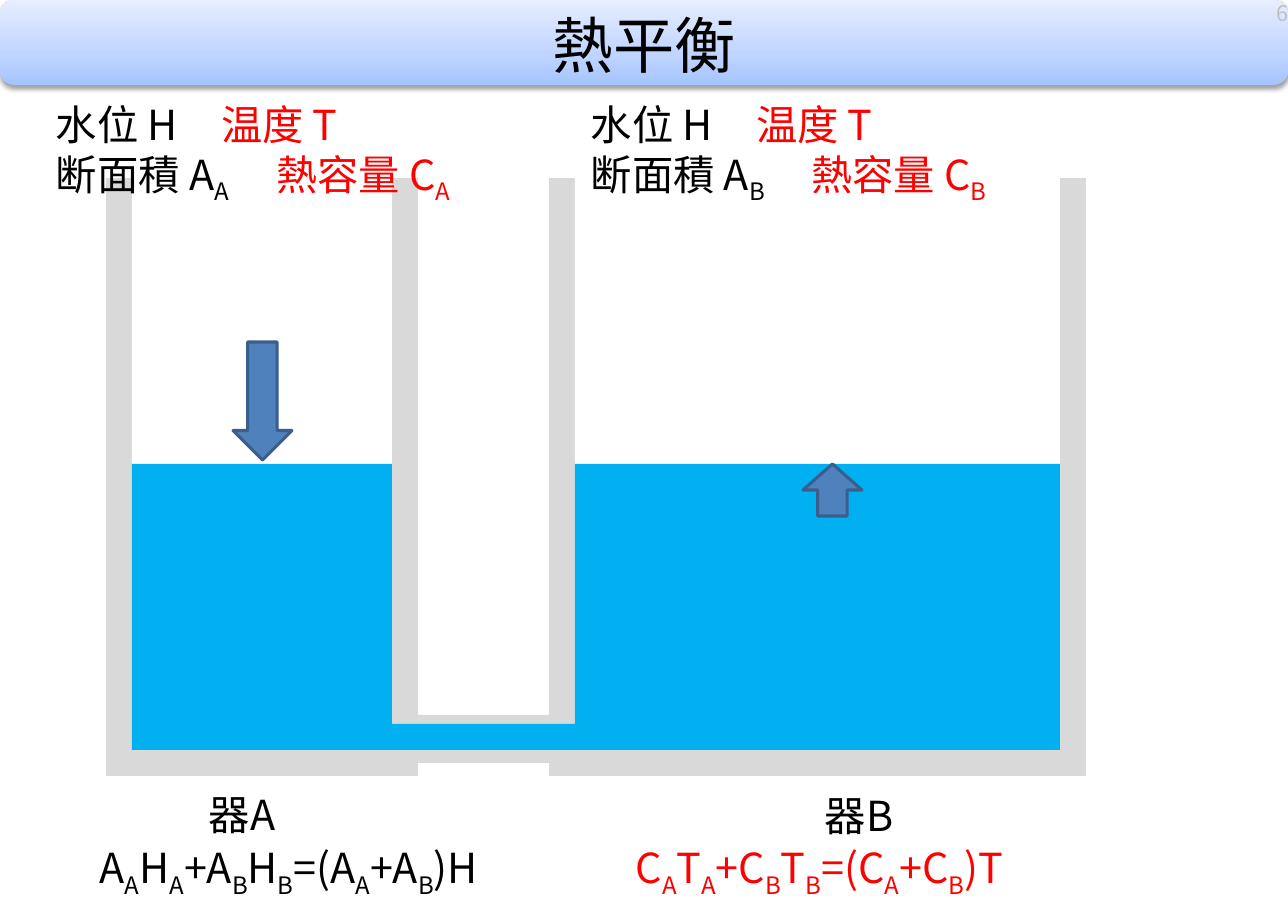
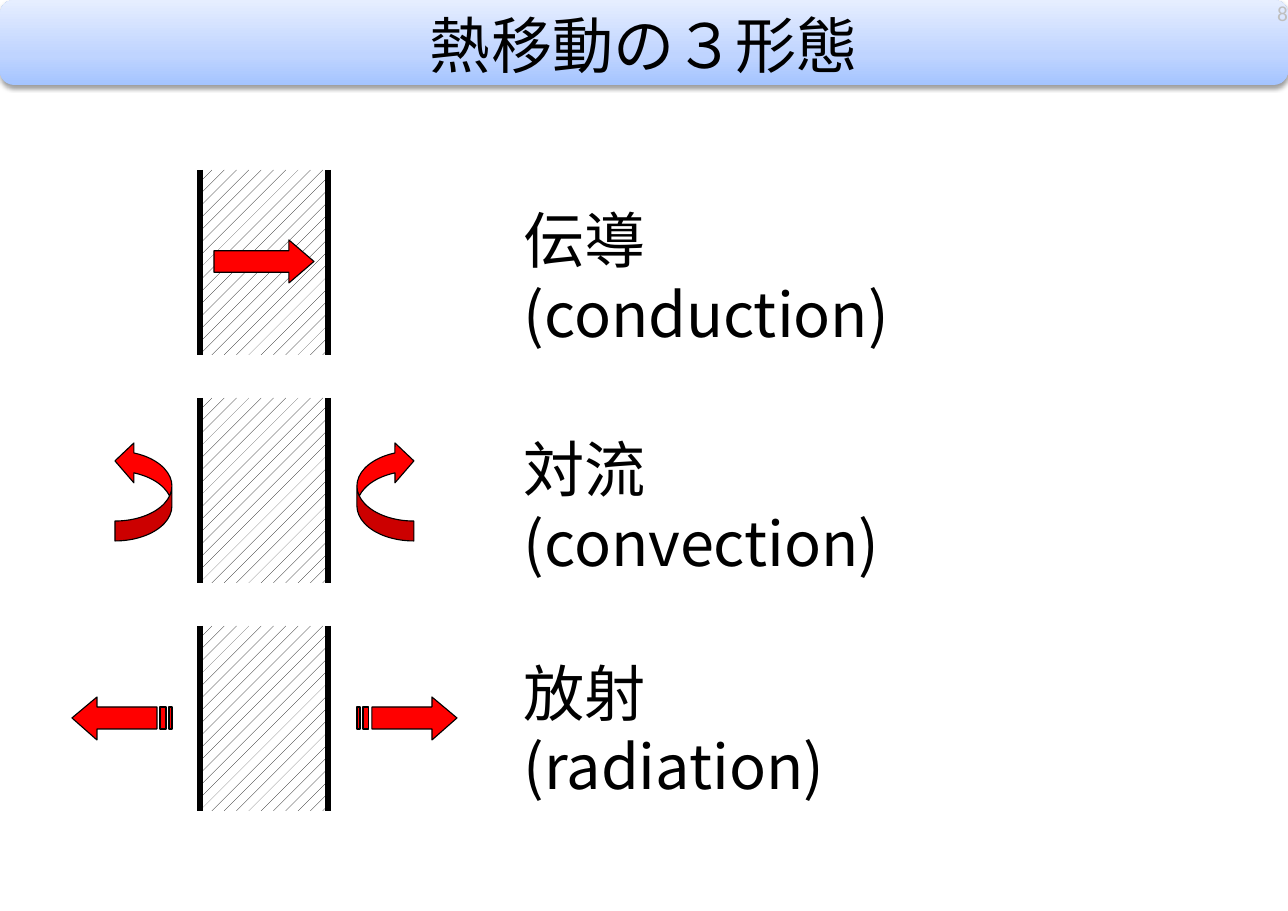
from dataclasses import dataclass

from lxml.etree import SubElement
from pptx import Presentation
from pptx.dml.color import RGBColor
from pptx.enum.dml import MSO_PATTERN
from pptx.enum.shapes import MSO_CONNECTOR, MSO_SHAPE
from pptx.enum.text import MSO_ANCHOR, PP_ALIGN
from pptx.oxml.ns import qn
from pptx.shapes.autoshape import Shape
from pptx.slide import Slide
from pptx.util import Pt

# Shared scale, colours and fonts
PX = 8300  # EMU per px
PAGE_W, PAGE_H = 1288, 911
BLACK, WHITE, RED = "000000", "FFFFFF", "FF0000"
WALL_GREY, WATER_BLUE = "D9D9D9", "00B0F0"
ARROW_BLUE, ARROW_EDGE, NUMBER_GREY = "4F81BD", "3A5F8C", "BFBFBF"
BAND_STOPS = [(0, "A4C4FF"), (35, "BFD4FF"), (100, "E6EEFF")]
BODY_FONT, NUMBER_FONT = "Noto Sans CJK JP", "Calibri"
NO_INSETS = dict(margin_left=0, margin_top=0, margin_right=0,
                 margin_bottom=0, vertical_anchor=MSO_ANCHOR.MIDDLE)


@dataclass(frozen=True)
class Box:
    left: int
    top: int
    width: int
    height: int

    def emu(self) -> list[int]:
        return [v * PX for v in (self.left, self.top, self.width, self.height)]


@dataclass(frozen=True)
class Span:
    """Text in one colour; the character after each underscore is a subscript."""
    text: str
    color: str = BLACK


@dataclass(frozen=True)
class Vessel:
    letter: str
    outer: Box
    name_box: Box
    state_box: Box


@dataclass(frozen=True)
class HeatMode:
    label: str
    label_top: int


def rgb(color: str) -> RGBColor:
    return RGBColor.from_string(color)


# Drawing helpers
def outline(shape: Shape, color: str | None, points: float) -> None:
    if color is None:
        shape.line.fill.background()
    else:
        shape.line.color.rgb = rgb(color)
        shape.line.width = Pt(points)


def paint(shape: Shape, fill: str, line: str | None = None,
          points: float = 0.75) -> None:
    shape.shadow.inherit = False
    shape.fill.solid()
    shape.fill.fore_color.rgb = rgb(fill)
    outline(shape, line, points)


def add_preset(slide: Slide, kind: MSO_SHAPE, box: Box, fill: str,
               line: str | None = None, points: float = 0.75,
               adjust: tuple[float, ...] = (), flip: str = "") -> None:
    shape = slide.shapes.add_shape(kind, *box.emu())
    paint(shape, fill, line, points)
    for index, value in enumerate(adjust):
        shape.adjustments[index] = value
    for axis in flip:
        shape._element.spPr.find(qn("a:xfrm")).set(f"flip{axis}", "1")


def add_text(slide: Slide, box: Box, lines: list[list[Span]], size: int,
             font: str = BODY_FONT, align: PP_ALIGN = PP_ALIGN.LEFT,
             frame_format: dict | None = None) -> None:
    frame = slide.shapes.add_textbox(*box.emu()).text_frame
    for name, value in {"word_wrap": True, **(frame_format or {})}.items():
        setattr(frame, name, value)
    for index, spans in enumerate(lines):
        paragraph = frame.add_paragraph() if index else frame.paragraphs[0]
        paragraph.alignment = align
        for span in spans:
            plain, *marked = span.text.split("_")
            pieces = [(plain, False)]
            for piece in marked:
                pieces += [(piece[0], True), (piece[1:], False)]
            for text, lowered in pieces:
                for part_no, part in enumerate(text.split("\n")):
                    if part_no:
                        paragraph.add_line_break()
                    if not part:
                        continue
                    run = paragraph.add_run()
                    run.text = part
                    for name, value in {"size": Pt(size), "name": font}.items():
                        setattr(run.font, name, value)
                    run.font.color.rgb = rgb(span.color)
                    props = run.font._element
                    SubElement(props, qn("a:ea")).set("typeface", font)
                    if lowered:
                        props.set("baseline", "-25000")


def add_band(slide: Slide) -> None:
    band = slide.shapes.add_shape(MSO_SHAPE.ROUNDED_RECTANGLE,
                                  *Box(0, 0, PAGE_W, 85).emu())
    outline(band, None, 0)
    band.fill.gradient()
    band.fill.gradient_angle = 90
    band.shadow.inherit = False
    props = band._element.spPr
    stops = props.find(f".//{qn('a:gsLst')}")
    for stop in list(stops):
        stops.remove(stop)
    for percent, color in BAND_STOPS:
        stop = SubElement(stops, qn("a:gs"), pos=str(percent * 1000))
        SubElement(stop, qn("a:srgbClr"), val=color)
    shadow = SubElement(props.find(qn("a:effectLst")), qn("a:outerShdw"),
                        blurRad=str(Pt(3.1)), dist=str(Pt(1.6)),
                        dir="5400000", rotWithShape="0")
    shade = SubElement(shadow, qn("a:srgbClr"), val=BLACK)
    SubElement(shade, qn("a:alpha"), val="38000")


def start_slide(prs: Presentation, title: str, number: str,
                number_font: str) -> Slide:
    slide = prs.slides.add_slide(prs.slide_layouts[6])
    add_band(slide)
    add_text(slide, Box(0, 1, PAGE_W, 87), [[Span(title)]], 40,
             align=PP_ALIGN.CENTER, frame_format=NO_INSETS)
    add_text(slide, Box(1251, 0, 37, 26), [[Span(number, NUMBER_GREY)]], 14,
             number_font, PP_ALIGN.RIGHT, NO_INSETS)
    return slide


# Thermal equilibrium: two joined vessels
WALL = 26
WATER_TOP, FLOOR = 464, 750
VESSELS = [
    Vessel("A", Box(106, 178, 312, 598), Box(198, 784, 116, 62),
           Box(45, 94, 457, 111)),
    Vessel("B", Box(549, 178, 537, 598), Box(814, 785, 116, 62),
           Box(580, 94, 457, 111)),
]
BALANCES = [
    (89, Span("A_AH_A+A_BH_B=(A_A+A_B)H")),
    (625, Span("C_AT_A+C_BT_B=(C_A+C_B)T", RED)),
]
LEVEL_ARROWS = [(Box(233, 342, 59, 118), ""), (Box(803, 464, 59, 52), "V")]


def add_vessel(slide: Slide, outer: Box) -> None:
    left, width = outer.left + WALL, outer.width - 2 * WALL
    inside = Box(left, outer.top, width, FLOOR - outer.top)
    water = Box(left, WATER_TOP, width, FLOOR - WATER_TOP)
    for box, color in ((outer, WALL_GREY), (inside, WHITE),
                       (water, WATER_BLUE)):
        add_preset(slide, MSO_SHAPE.RECTANGLE, box, color)


def build_equilibrium(prs: Presentation) -> None:
    slide = start_slide(prs, "熱平衡", "6", BODY_FONT)
    pipe_left = VESSELS[0].outer.left + VESSELS[0].outer.width
    pipe_width = VESSELS[1].outer.left - pipe_left
    add_preset(slide, MSO_SHAPE.RECTANGLE,
               Box(pipe_left, 715, pipe_width, 48), WALL_GREY)
    for vessel in VESSELS:
        add_vessel(slide, vessel.outer)
    add_preset(slide, MSO_SHAPE.RECTANGLE,
               Box(pipe_left - WALL, FLOOR - WALL, pipe_width + 2 * WALL, WALL),
               WATER_BLUE)
    for box, flip in LEVEL_ARROWS:
        add_preset(slide, MSO_SHAPE.DOWN_ARROW, box, ARROW_BLUE, ARROW_EDGE,
                   2, flip=flip)

    # Names, states and balance equations
    for vessel in VESSELS:
        letter = vessel.letter
        add_text(slide, vessel.name_box, [[Span(f"器{letter}")]], 27)
        state = [[Span("水位 H\t"), Span("温度 T", RED)],
                 [Span(f"断面積 A_{letter}\t"),
                  Span(f"熱容量 C_{letter}", RED)]]
        add_text(slide, vessel.state_box, state, 27)
    for left, equation in BALANCES:
        add_text(slide, Box(left, 837, 549, 62), [[equation]], 27)


# Three modes of heat transfer: one wall per row
SLAB_LEFT, SLAB_WIDTH, SLAB_HEIGHT = 200, 129, 185
FIRST_ROW, ROW_STEP = 170, 228
TAIL_LEFT, TAIL_RIGHT = 172, 357
SWIRL_WIDTH = 57
MODES = [
    HeatMode("伝導\n(conduction)", 197),
    HeatMode("対流\n(convection)", 426),
    HeatMode("放射\n(radiation)", 650),
]
# Outlines measured from the tail of the arrow
RAY_OUTLINES = [
    [(75, 0), (75, 10), (15, 10), (15, 32), (75, 32), (75, 43), (100, 21)],
    [(6, 10), (6, 32), (12, 32), (12, 10)],
    [(0, 10), (0, 32), (3, 32), (3, 10)],
]


def add_slab(slide: Slide, top: int) -> None:
    slab = slide.shapes.add_shape(
        MSO_SHAPE.RECTANGLE,
        *Box(SLAB_LEFT, top, SLAB_WIDTH, SLAB_HEIGHT).emu())
    slab.shadow.inherit = False
    slab.fill.patterned()
    slab.fill.pattern = MSO_PATTERN.PERCENT_10
    slab.fill.fore_color.rgb = rgb(BLACK)
    slab.fill.back_color.rgb = rgb(WHITE)
    outline(slab, None, 0)
    for x in (SLAB_LEFT, SLAB_LEFT + SLAB_WIDTH - 1):
        face = slide.shapes.add_connector(
            MSO_CONNECTOR.STRAIGHT, x * PX, top * PX, x * PX,
            (top + SLAB_HEIGHT) * PX)
        face.line.color.rgb = rgb(BLACK)
        face.line.width = Pt(4.5)
        SubElement(face._element.spPr, qn("a:effectLst"))


def add_ray(slide: Slide, tail: int, top: int, direction: int) -> None:
    contours = [[(tail + direction * x, top + y) for x, y in points]
                for points in RAY_OUTLINES]
    builder = slide.shapes.build_freeform(*contours[0][0], scale=PX)
    for index, (start, *rest) in enumerate(contours):
        if index:
            builder.move_to(*start)
        builder.add_line_segments(rest, close=True)
    paint(builder.convert_to_shape(), RED, BLACK)


def build_heat_modes(prs: Presentation) -> None:
    slide = start_slide(prs, "熱移動の３形態", "8", NUMBER_FONT)
    tops = [FIRST_ROW + row * ROW_STEP for row in range(len(MODES))]
    for top, mode in zip(tops, MODES):
        add_slab(slide, top)
        add_text(slide, Box(513, mode.label_top, 503, 85),
                 [[Span(mode.label)]], 40)

    # Heat arrows of each mode
    conduction, convection, radiation = tops
    add_preset(slide, MSO_SHAPE.RIGHT_ARROW, Box(214, conduction + 70, 100, 43),
               RED, BLACK, adjust=(0.5, 0.583))
    for left, flip in ((TAIL_LEFT - SWIRL_WIDTH, "V"), (TAIL_RIGHT, "HV")):
        add_preset(slide, MSO_SHAPE.CURVED_LEFT_ARROW,
                   Box(left, convection + 43, SWIRL_WIDTH, 100), RED, BLACK,
                   adjust=(0.35, 0.7, 0.333), flip=flip)
    for tail, direction in ((TAIL_RIGHT, 1), (TAIL_LEFT, -1)):
        add_ray(slide, tail, radiation + 71, direction)


def main() -> None:
    prs = Presentation()
    prs.slide_width, prs.slide_height = PAGE_W * PX, PAGE_H * PX
    build_equilibrium(prs)
    build_heat_modes(prs)
    prs.save("out.pptx")


if __name__ == "__main__":
    main()
